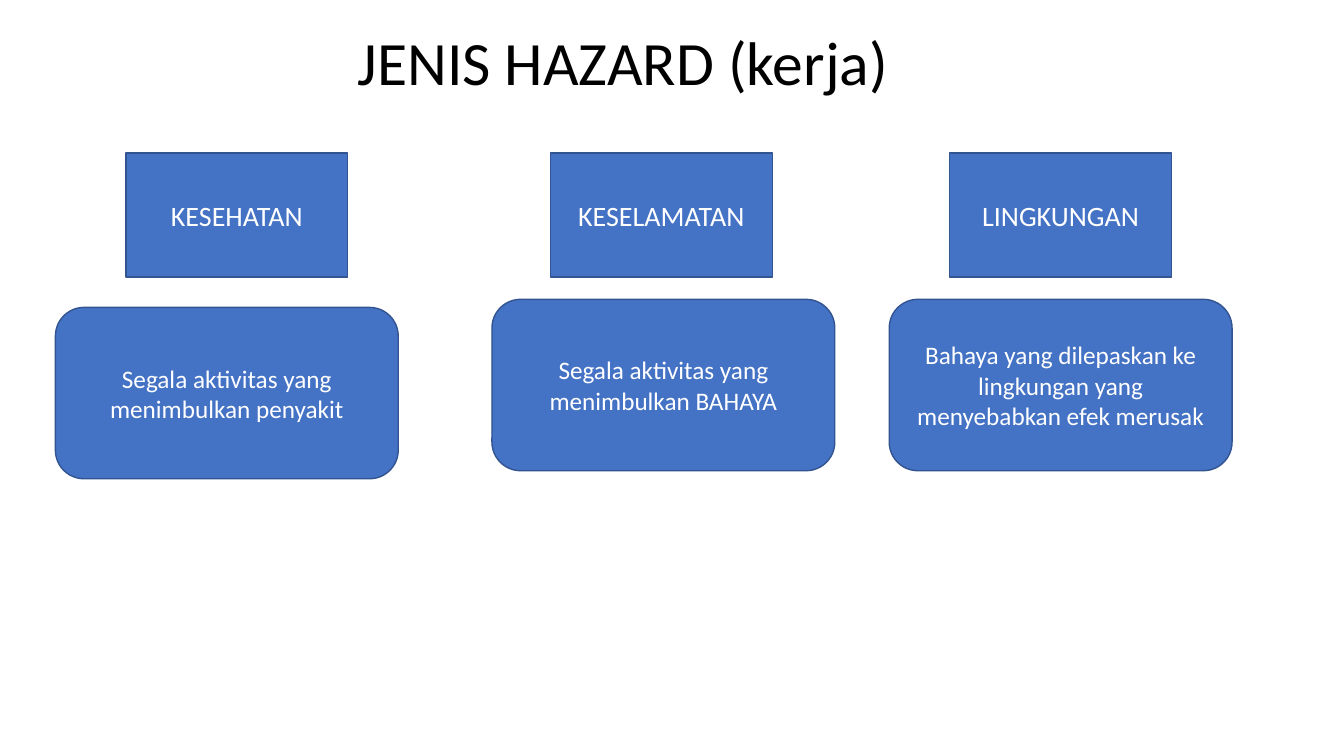
from pptx import Presentation
from pptx.dml.color import RGBColor
from pptx.enum.shapes import MSO_SHAPE
from pptx.enum.text import MSO_ANCHOR, PP_ALIGN
from pptx.util import Inches, Pt

COLORS = {"fill": "4472C4", "line": "325491", "dark": "000000", "light": "FFFFFF"}
FONT = "Calibri"
HEAD_TOP = 1.52
TYPES = [
    ("KESEHATAN", 1.25, "Segala aktivitas yang menimbulkan penyakit", 0.55, 3.05),
    ("KESELAMATAN", 5.46, "Segala aktivitas yang menimbulkan BAHAYA", 4.88, 2.97),
    ("LINGKUNGAN", 9.42,
     "Bahaya yang dilepaskan ke lingkungan yang menyebabkan efek merusak", 8.82, 2.97),
]


def color(name):
    return RGBColor.from_string(COLORS[name])


def write(shape, text, size, tint, align):
    frame = shape.text_frame
    frame.word_wrap = True
    frame.vertical_anchor = MSO_ANCHOR.MIDDLE
    para = frame.paragraphs[0]
    para.alignment = align
    run = para.add_run()
    run.text = text
    run.font.name = FONT
    run.font.size = Pt(size)
    run.font.color.rgb = color(tint)
    return para


def add_title(slide, box, text):
    label = slide.shapes.add_textbox(*map(Inches, box))
    write(label, text, 44, "dark", PP_ALIGN.LEFT).line_spacing = 0.9


def add_block(slide, kind, box, text, size):
    block = slide.shapes.add_shape(kind, *map(Inches, box))
    block.shadow.inherit = False
    block.fill.solid()
    block.fill.fore_color.rgb = color("fill")
    block.line.color.rgb = color("line")
    block.line.width = Pt(1)
    write(block, text, size, "light", PP_ALIGN.CENTER)


def main():
    deck = Presentation()
    deck.slide_width = Inches(13.33)
    deck.slide_height = Inches(7.5)
    slide = deck.slides.add_slide(deck.slide_layouts[6])
    add_title(slide, (3.45, 0.08, 6.43, 1.15), "JENIS HAZARD (kerja)")
    for head, left, body, edge, top in TYPES:
        add_block(slide, MSO_SHAPE.RECTANGLE, (left, HEAD_TOP, 2.2, 1.23), head, 20)
        add_block(slide, MSO_SHAPE.ROUNDED_RECTANGLE, (edge, top, 3.4, 1.7), body, 18)
    deck.save("out.pptx")


if __name__ == "__main__":
    main()
